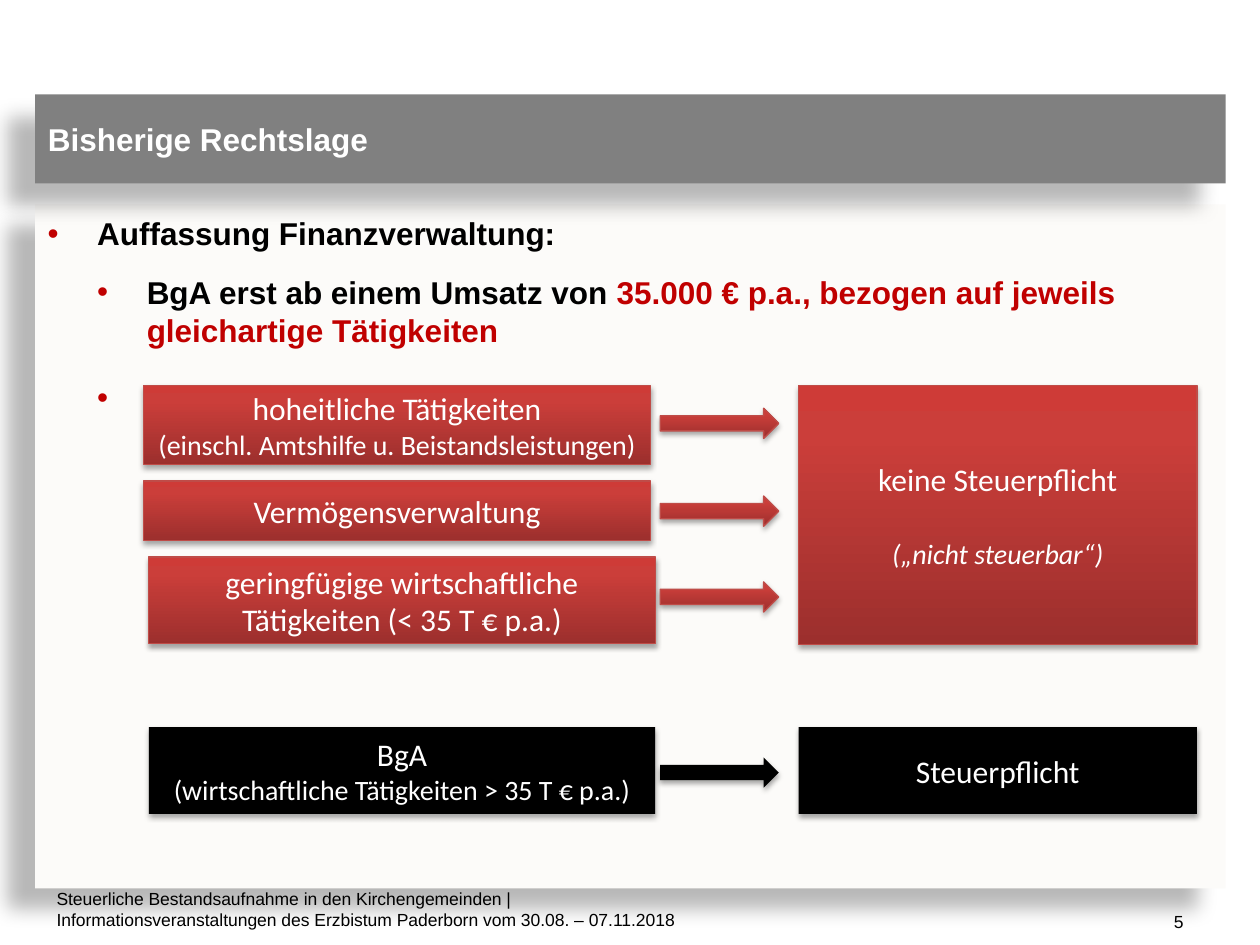
from dataclasses import dataclass

from lxml.etree import SubElement
from pptx import Presentation
from pptx.dml.color import RGBColor
from pptx.enum.shapes import MSO_SHAPE as Preset
from pptx.enum.text import MSO_ANCHOR as Anchor, PP_ALIGN as Align
from pptx.oxml.ns import qn
from pptx.util import Cm, Pt

BLACK, WHITE, GREY, PAPER = "000000", "FFFFFF", "808080", "FCFBF9"
ACCENT, RED_EDGE = "C00000", "BF4C48"
RED_STOPS = ((0, "9C2F2D"), (80, "CB3E3A"), (100, "CE3B37"))


@dataclass
class Shadow:
    alpha: int
    blur: float
    distance: float
    angle: int


@dataclass
class Line:
    text: str
    size: int = 18
    italic: bool = False
    before: int = 0


@dataclass
class Block:
    left: float
    top: float
    width: float
    height: float
    lines: list[Line]
    red: bool = True


PANEL_SHADOW = Shadow(28, 11.8, 19.7, 141)
BLOCK_SHADOW = Shadow(35, 3.1, 1.8, 90)

CAUSE_WIDTH, RESULT_LEFT, RESULT_WIDTH = 10.21, 16.1, 8.03
BLOCKS = [
    Block(2.9, 7.77, CAUSE_WIDTH, 1.6, [
        Line("hoheitliche Tätigkeiten"),
        Line("(einschl. Amtshilfe u. Beistandsleistungen)", 16)]),
    Block(2.9, 9.7, CAUSE_WIDTH, 1.2, [Line("Vermögensverwaltung")]),
    Block(3, 11.23, CAUSE_WIDTH, 1.75, [
        Line("geringfügige wirtschaftliche Tätigkeiten (< 35 T € p.a.)")]),
    Block(RESULT_LEFT, 7.77, RESULT_WIDTH, 5.22, [
        Line("keine Steuerpflicht"),
        Line("(„nicht steuerbar“)", 16, italic=True, before=22)]),
    Block(3, 14.66, CAUSE_WIDTH, 1.75, [
        Line("BgA"),
        Line("(wirtschaftliche Tätigkeiten > 35 T € p.a.)", 16)], red=False),
    Block(RESULT_LEFT, 14.66, RESULT_WIDTH, 1.75, [Line("Steuerpflicht")], red=False),
]
ARROWS = [(8.23, True), (10, True), (11.73, True), (15.27, False)]


def color(value: str) -> RGBColor:
    return RGBColor.from_string(value)


def place(shape, left: float, top: float, width: float, height: float) -> None:
    shape.left, shape.top = Cm(left), Cm(top)
    shape.width, shape.height = Cm(width), Cm(height)


def set_font(font, size: int, name: str, tint: str, bold: bool = False) -> None:
    font.size, font.name, font.bold = Pt(size), name, bold
    font.color.rgb = color(tint)


def add_shadow(shape, shadow: Shadow) -> None:
    shape.shadow.inherit = False
    effects = shape._element.spPr.find(qn("a:effectLst"))
    outer = SubElement(effects, qn("a:outerShdw"), blurRad=str(Pt(shadow.blur)),
                       dist=str(Pt(shadow.distance)), dir=str(shadow.angle * 60000),
                       algn="ctr", rotWithShape="0")
    tint = SubElement(outer, qn("a:srgbClr"), val=BLACK)
    SubElement(tint, qn("a:alpha"), val=str(shadow.alpha * 1000))


def fill_solid(shape, tint: str) -> None:
    shape.fill.solid()
    shape.fill.fore_color.rgb = color(tint)
    shape.line.fill.background()


def fill_red(shape) -> None:
    """Vertical three-stop gradient, dark at the bottom."""
    shape.fill.gradient()
    shape.fill.gradient_angle = 90
    stops = shape._element.spPr.find(qn("a:gradFill")).find(qn("a:gsLst"))
    for stop in list(stops):
        stops.remove(stop)
    for position, tint in RED_STOPS:
        stop = SubElement(stops, qn("a:gs"), pos=str(position * 1000))
        SubElement(stop, qn("a:srgbClr"), val=tint)
    shape.line.color.rgb = color(RED_EDGE)
    shape.line.width = Pt(0.75)


def add_preset(page, preset, left: float, top: float, width: float, height: float,
               red: bool):
    shape = page.shapes.add_shape(preset, Cm(left), Cm(top), Cm(width), Cm(height))
    if red:
        fill_red(shape)
    else:
        fill_solid(shape, BLACK)
    add_shadow(shape, BLOCK_SHADOW)
    return shape


def add_block(page, block: Block) -> None:
    shape = add_preset(page, Preset.RECTANGLE, block.left, block.top,
                       block.width, block.height, block.red)
    frame = shape.text_frame
    frame.word_wrap, frame.vertical_anchor = True, Anchor.MIDDLE
    for index, line in enumerate(block.lines):
        para = frame.add_paragraph() if index else frame.paragraphs[0]
        para.alignment = Align.CENTER
        if line.before:
            para.space_before = Pt(line.before)
        para.add_run().text = line.text
        set_font(para.font, line.size, "Calibri", WHITE)
        para.font.italic = line.italic


def add_note(page, left: float, top: float, width: float, lines: list[str],
             align=Align.LEFT) -> None:
    box = page.shapes.add_textbox(Cm(left), Cm(top), Cm(width), Cm(1.02))
    frame = box.text_frame
    frame.word_wrap, frame.vertical_anchor = True, Anchor.BOTTOM
    for index, text in enumerate(lines):
        para = frame.add_paragraph() if index else frame.paragraphs[0]
        para.alignment = align
        para.add_run().text = text
        set_font(para.font, 10, "Arial", BLACK)


def add_bullet(para, indent: float, spans: list[tuple[str, str]], after: int) -> None:
    props = para._p.get_or_add_pPr()
    props.set("marL", str(Cm(indent)))
    props.set("indent", str(-Cm(1)))
    SubElement(SubElement(props, qn("a:buClr")), qn("a:srgbClr"), val=ACCENT)
    SubElement(props, qn("a:buFont"), typeface="Arial")
    SubElement(props, qn("a:buChar"), char="•")
    para.alignment, para.space_after = Align.LEFT, Pt(after)
    set_font(para.font, 18, "Arial", BLACK, bold=True)
    for text, tint in spans:
        span = para.add_run()
        span.text = text
        if tint != BLACK:
            span.font.color.rgb = color(tint)


def add_panel(page) -> None:
    panel = page.shapes.add_shape(Preset.RECTANGLE, 0, 0, 0, 0)
    place(panel, 0.71, 4.12, 24, 13.79)
    fill_solid(panel, PAPER)
    add_shadow(panel, PANEL_SHADOW)
    frame = panel.text_frame
    frame.word_wrap, frame.vertical_anchor = True, Anchor.TOP
    frame.margin_top = Cm(0.2)
    add_bullet(frame.paragraphs[0], 1, [("Auffassung Finanzverwaltung:", BLACK)], 12)
    add_bullet(frame.add_paragraph(), 2, [
        ("BgA erst ab einem Umsatz von ", BLACK),
        ("35.000 € p.a., bezogen auf jeweils gleichartige Tätigkeiten", ACCENT)], 12)
    # The third bullet introduces the diagram
    diagram = frame.add_paragraph()
    add_bullet(diagram, 2, [(" ", BLACK)], 3)
    diagram.line_spacing = Pt(27)


def format_title(page) -> None:
    title = page.shapes.title
    page.shapes._spTree.append(title._element)  # bring in front of the panel
    place(title, 0.71, 1.9, 24, 1.8)
    fill_solid(title, GREY)
    add_shadow(title, PANEL_SHADOW)
    title.text_frame.text = "Bisherige Rechtslage"
    title.text_frame.vertical_anchor = Anchor.MIDDLE
    para = title.text_frame.paragraphs[0]
    para.alignment = Align.LEFT
    set_font(para.font, 18, "Arial", WHITE, bold=True)


def main() -> None:
    deck = Presentation()
    deck.slide_width, deck.slide_height = Cm(25.4), Cm(19.05)
    page = deck.slides.add_slide(deck.slide_layouts[5])

    # Footer, panel, page number and title bar
    add_note(page, 0.89, 17.86, 15.82, [
        "Steuerliche Bestandsaufnahme in den Kirchengemeinden |",
        "Informationsveranstaltungen des Erzbistum Paderborn vom 30.08. – 07.11.2018"])
    add_panel(page)
    add_note(page, 18.19, 17.9, 5.92, ["5"], Align.RIGHT)
    format_title(page)

    # Activities, tax results and the arrows between them
    for block in BLOCKS:
        add_block(page, block)
    for top, red in ARROWS:
        add_preset(page, Preset.RIGHT_ARROW, 13.31, top, 2.39, 0.61, red)
    deck.save("out.pptx")


if __name__ == "__main__":
    main()
